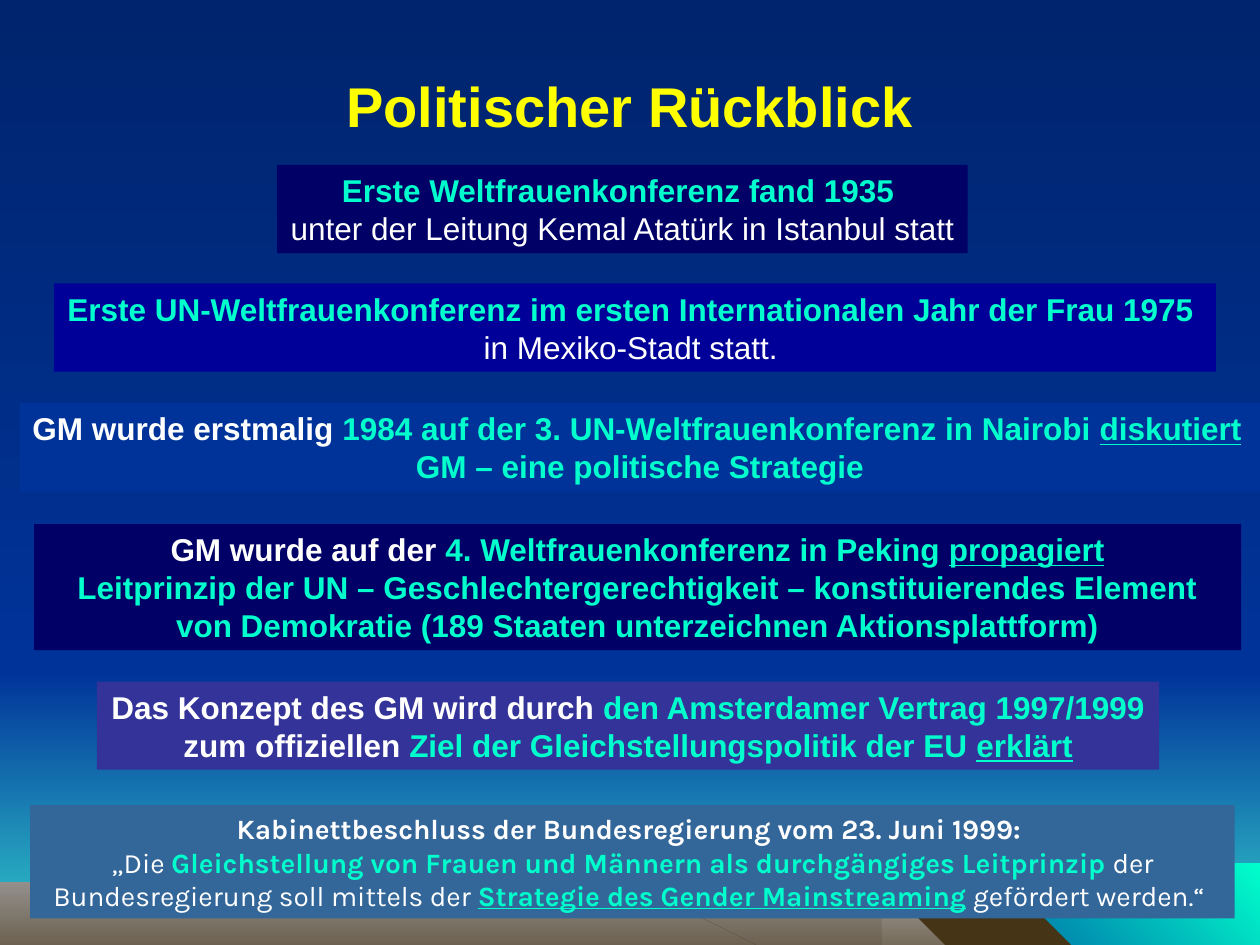
from pptx import Presentation
from pptx.dml.color import RGBColor
from pptx.enum.shapes import MSO_SHAPE
from pptx.enum.text import MSO_ANCHOR, PP_ALIGN
from pptx.util import Inches, Pt

WHITE = RGBColor(0xFF, 0xFF, 0xFF)
YELLOW = RGBColor(0xFF, 0xFF, 0x00)
MINT = RGBColor(0x00, 0xFF, 0xCC)
NIGHT = RGBColor(0x00, 0x24, 0x6D)
BLUE = RGBColor(0x00, 0x33, 0x99)
TEAL = RGBColor(0x33, 0xCC, 0xCC)
NAVY = RGBColor(0x00, 0x00, 0x66)
ROYAL = RGBColor(0x00, 0x00, 0x99)
VIOLET = RGBColor(0x33, 0x33, 0x99)
STEEL = RGBColor(0x33, 0x66, 0x99)
BROWN = RGBColor(0x46, 0x34, 0x16)
LIGHT_ROCK = RGBColor(0xA5, 0xA2, 0x9F)
DARK_ROCK = RGBColor(0x93, 0x8F, 0x8B)

DOWN, UP_RIGHT = 270, 45

PLAIN = {"bold": False, "color": WHITE}
STRONG = {"bold": True, "color": WHITE}
ACCENT = {"bold": True, "color": MINT}
MARKED = {"bold": True, "color": MINT, "underline": True}


def paint(shape, colors, angle=DOWN):
    """Fill with one colour or a two-colour gradient, without line and shadow."""
    shape.shadow.inherit = False
    shape.line.fill.background()
    if len(colors) == 1:
        shape.fill.solid()
        shape.fill.fore_color.rgb = colors[0]
        return
    shape.fill.gradient()
    shape.fill.gradient_angle = angle
    for stop, color, position in zip(shape.fill.gradient_stops, colors, (0, 1)):
        stop.color.rgb = color
        stop.position = position


def add_span(para, text, size, font, style):
    span = para.add_run()
    span.text = text
    span.font.color.rgb = style["color"]
    values = {"size": Pt(size), "name": font, "bold": style["bold"],
              "underline": style.get("underline", False)}
    for name, value in values.items():
        setattr(span.font, name, value)


deck = Presentation()
deck.slide_width, deck.slide_height = Inches(10), Inches(7.5)
page = deck.slides.add_slide(deck.slide_layouts[5])
page.background.fill.solid()
page.background.fill.fore_color.rgb = BLUE

# Sky, horizon and the bright corner
for left, top, width, height, colors, angle in [
    (0, 5.33, 10, 2.17, (BLUE, TEAL), DOWN),
    (0, 0, 10, 5.33, (NIGHT, BLUE), DOWN),
    (6.83, 6.85, 3.17, 0.65, (BLUE, MINT), UP_RIGHT),
]:
    area = page.shapes.add_shape(MSO_SHAPE.RECTANGLE, Inches(left), Inches(top),
                                 Inches(width), Inches(height))
    paint(area, colors, angle)

# Hills along the bottom edge
hills = [
    ((LIGHT_ROCK, BROWN), [
        (8.21, 7.5), (8.02, 7.4), (7.78, 7.27), (7.64, 7.23), (7.23, 6.98),
        (7.02, 6.71), (6.85, 6.6), (6.56, 6.71), (6.29, 6.71), (6.13, 6.81),
        (5.66, 6.97), (5.36, 6.9), (5.26, 6.73), (5.09, 6.69), (4.86, 6.73),
        (4.71, 6.58), (4.65, 6.58), (4.38, 6.71), (4.24, 6.72), (3.94, 6.85),
        (3.55, 6.98), (3.27, 7.09), (2.77, 7.39), (2.58, 7.5)]),
    ((BROWN,), [
        (7.96, 7.24), (7.71, 7.24), (7.34, 7.03), (7.07, 6.71), (6.85, 6.6),
        (6.85, 6.71), (6.98, 7.02), (6.93, 7.33), (7.2, 7.17), (7.9, 7.5),
        (8.58, 7.5), (8.29, 7.42)]),
    ((DARK_ROCK, BROWN), [
        (6.9, 7.5), (6.67, 7.48), (4.32, 7.12), (3.54, 6.65), (3.31, 6.63),
        (3.23, 6.68), (3.18, 6.64), (2.96, 6.76), (2.71, 6.82), (2.6, 6.76),
        (2.36, 6.81), (2.22, 6.62), (2.08, 6.58), (1.96, 6.58), (1.6, 6.71),
        (1.48, 6.67), (1.32, 6.71), (0.94, 6.71), (0.68, 6.62), (0.46, 6.74),
        (0.26, 6.85), (0.14, 6.88), (0, 6.9), (0, 7.5)]),
    ((BROWN,), [
        (3.7, 6.68), (3.54, 6.65), (3.44, 6.65), (3.39, 6.69), (3.37, 6.87),
        (3.48, 6.83), (3.63, 6.91), (3.74, 7.12), (4.07, 7.27), (4.72, 7.27),
        (6.9, 7.5), (4.55, 7.07), (4.27, 6.92), (4.01, 6.81)]),
]
for colors, points in hills:
    outline = page.shapes.build_freeform(*points[0], scale=Inches(1))
    outline.add_line_segments(points[1:], close=True)
    paint(outline.convert_to_shape(), colors)

# Title, raised above the scenery
title = page.shapes.title
page.shapes.element.append(title.element)
for name, value in {"left": 2.48, "top": 0.52, "width": 5.04, "height": 0.63}.items():
    setattr(title, name, Inches(value))
title.text_frame.vertical_anchor = MSO_ANCHOR.MIDDLE
title.text_frame.paragraphs[0].alignment = PP_ALIGN.CENTER
add_span(title.text_frame.paragraphs[0], "Politischer Rückblick", 32, "Arial",
         {"bold": True, "color": YELLOW})

# Milestones: place, fill, size, font, wrap, paragraphs of (text, style)
milestones = [
    ((2.2, 1.31, 5.48, 0.7), NAVY, 18, "Arial", False, [
        [("Erste Weltfrauenkonferenz fand 1935 ", ACCENT)],
        [("unter der Leitung Kemal Atatürk in Istanbul statt", PLAIN)]]),
    ((0.43, 2.25, 9.22, 0.7), ROYAL, 18, "Arial", False, [
        [("Erste UN-Weltfrauenkonferenz im ersten Internationalen Jahr der Frau 1975 ",
          ACCENT)],
        [("in Mexiko-Stadt statt. ", PLAIN)]]),
    ((0.16, 3.2, 9.84, 0.7), BLUE, 18, "Arial", True, [
        [("GM wurde erstmalig ", STRONG),
         ("1984 auf der 3. UN-Weltfrauenkonferenz in Nairobi ", ACCENT),
         ("diskutiert", MARKED)],
        [("GM – eine politische Strategie", ACCENT)]]),
    ((0.27, 4.16, 9.58, 1), NAVY, 18, "Arial", True, [
        [("GM wurde auf der ", STRONG),
         ("4. Weltfrauenkonferenz in Peking ", ACCENT),
         ("propagiert", MARKED)],
        [("Leitprinzip der UN – Geschlechtergerechtigkeit – konstituierendes Element "
          "von Demokratie (189 Staaten unterzeichnen Aktionsplattform)", ACCENT)]]),
    ((0.77, 5.41, 8.43, 0.7), VIOLET, 18, "Arial", True, [
        [("Das Konzept des GM wird durch ", STRONG),
         ("den Amsterdamer Vertrag 1997/1999", ACCENT),
         (" zum offiziellen ", STRONG),
         ("Ziel der Gleichstellungspolitik der EU ", ACCENT),
         ("erklärt", MARKED)]]),
    ((0.24, 6.39, 9.56, 0.9), STEEL, 16, "Karla", True, [
        [("Kabinettbeschluss der Bundesregierung vom 23. Juni 1999: ", STRONG)],
        [("„Die ", PLAIN),
         ("Gleichstellung von Frauen und Männern als durchgängiges Leitprinzip", ACCENT),
         (" der Bundesregierung soll mittels der ", PLAIN),
         ("Strategie des Gender Mainstreaming", MARKED),
         (" gefördert werden.“ ", PLAIN)]]),
]
for place, color, size, font, wrap, lines in milestones:
    box = page.shapes.add_shape(MSO_SHAPE.RECTANGLE, *map(Inches, place))
    paint(box, (color,))
    frame = box.text_frame
    frame.word_wrap = wrap
    frame.vertical_anchor = MSO_ANCHOR.MIDDLE
    for index, line in enumerate(lines):
        para = frame.add_paragraph() if index else frame.paragraphs[0]
        # The Nairobi line fills its box and starts at the left edge
        nairobi = line[-1][0] == "diskutiert"
        para.alignment = PP_ALIGN.LEFT if nairobi else PP_ALIGN.CENTER
        for text, style in line:
            add_span(para, text, size, font, style)

deck.save("out.pptx")
